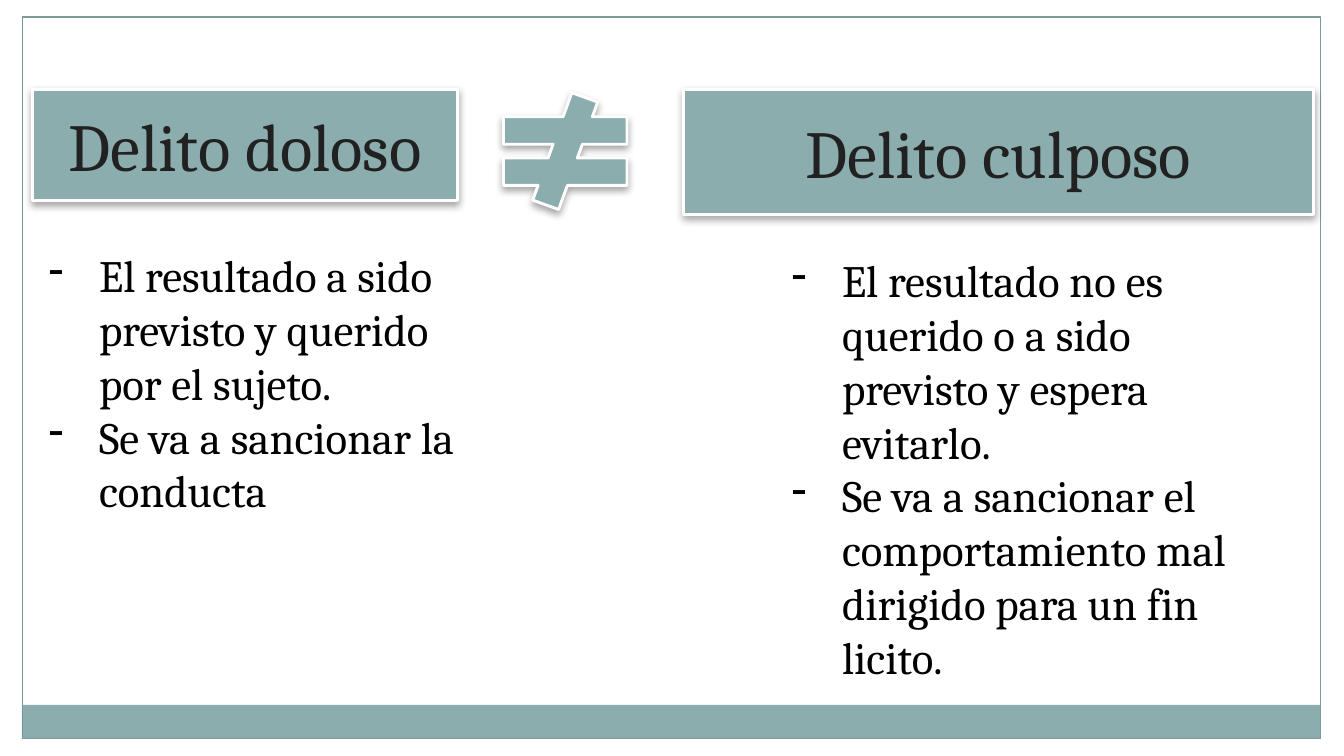
import pptx
import pptx.util
import pptx.dml.color
import pptx.enum.shapes
import pptx.enum.text
import pptx.oxml
import pptx.oxml.ns

Pt = pptx.util.Pt
SHAPE = pptx.enum.shapes.MSO_SHAPE
ALIGN = pptx.enum.text.PP_ALIGN
ANCHOR = pptx.enum.text.MSO_ANCHOR

COLORS = {
    "paper": "FFFFFF",
    "teal": "8CADAE",
    "frame": "7C999A",
    "heading": "212121",
    "body": "000000",
}
SHADOW = (
    f'<a:effectLst {pptx.oxml.ns.nsdecls("a")}>'
    f'<a:outerShdw blurRad="{Pt(4)}" dist="{Pt(2)}" dir="5400000" rotWithShape="0">'
    '<a:srgbClr val="000000"><a:alpha val="35000"/></a:srgbClr>'
    "</a:outerShdw></a:effectLst>"
)


def rgb(name):
    return pptx.dml.color.RGBColor.from_string(COLORS[name])


def write(para, text, *, size, color, font="Cambria", align=ALIGN.LEFT):
    para.alignment = align
    span = para.add_run()
    span.text = text
    span.font.name = font
    span.font.size = Pt(size)
    span.font.color.rgb = rgb(color)


def add_dash(para, indent):
    """Give the paragraph a dash bullet with a hanging indent in points."""
    properties = para._p.get_or_add_pPr()
    properties.set("marL", str(Pt(indent)))
    properties.set("indent", str(-Pt(indent)))
    namespace = pptx.oxml.ns.nsdecls("a")
    properties.append(pptx.oxml.parse_xml(f"<a:buFontTx {namespace}/>"))
    properties.append(pptx.oxml.parse_xml(f'<a:buChar {namespace} char="-"/>'))


class SlideBuilder:
    """Holds the style and the slide that is being filled."""

    heading_size = 36
    body_size = 24
    indent = 27

    def __init__(self, slide):
        self.slide = slide
        slide.background.fill.solid()
        slide.background.fill.fore_color.rgb = rgb("paper")

    def shape(self, kind, left, top, width, height, fill=None, line=None, weight=0.75):
        shape = self.slide.shapes.add_shape(kind, Pt(left), Pt(top), Pt(width), Pt(height))
        shape.shadow.inherit = False
        if fill:
            shape.fill.solid()
            shape.fill.fore_color.rgb = rgb(fill)
        else:
            shape.fill.background()
        if line:
            shape.line.color.rgb = rgb(line)
            shape.line.width = Pt(weight)
        else:
            shape.line.fill.background()
        return shape

    def raised(self, kind, left, top, width, height):
        """Add a teal shape with a white edge and a soft shadow below."""
        shape = self.shape(kind, left, top, width, height, "teal", "paper", 1.57)
        properties = shape._element.spPr
        properties.remove(properties.find(pptx.oxml.ns.qn("a:effectLst")))
        properties.append(pptx.oxml.parse_xml(SHADOW))
        return shape

    def heading(self, text, left, top, width, height):
        frame = self.raised(SHAPE.RECTANGLE, left, top, width, height).text_frame
        frame.word_wrap = True
        frame.vertical_anchor = ANCHOR.MIDDLE
        write(frame.paragraphs[0], text, size=self.heading_size,
              color="heading", align=ALIGN.CENTER)

    def dash_list(self, items, left, top, width, height):
        box = self.slide.shapes.add_textbox(Pt(left), Pt(top), Pt(width), Pt(height))
        frame = box.text_frame
        frame.word_wrap = True
        frame.auto_size = pptx.enum.text.MSO_AUTO_SIZE.SHAPE_TO_FIT_TEXT
        for index, item in enumerate(items):
            para = frame.add_paragraph() if index else frame.paragraphs[0]
            add_dash(para, self.indent)
            write(para, item, size=self.body_size, color="body")


def main():
    deck = pptx.Presentation()
    deck.slide_width, deck.slide_height = Pt(720), Pt(405)
    page = SlideBuilder(deck.slides.add_slide(deck.slide_layouts[6]))

    page.shape(SHAPE.RECTANGLE, 11.8, 377.6, 695.5, 18.3, fill="teal")
    page.shape(SHAPE.RECTANGLE, 12, 9.2, 695.5, 386.6, line="frame")

    page.raised(SHAPE.MATH_NOT_EQUAL, 257.8, 49.7, 90, 62.6)
    page.heading("Delito doloso", 17.5, 47.8, 227.5, 59.8)
    page.heading("Delito culposo", 366, 47.8, 337.7, 67)

    page.dash_list(
        ["El resultado no es querido o a sido previsto y espera evitarlo.",
         "Se va a sancionar el comportamiento mal dirigido para un fin licito."],
        417, 132, 256.3, 239.8)
    page.dash_list(
        ["El resultado a sido previsto y querido por el sujeto.",
         "Se va a sancionar la conducta"],
        19, 129.3, 256.3, 152.6)

    deck.save("out.pptx")


if __name__ == "__main__":
    main()
